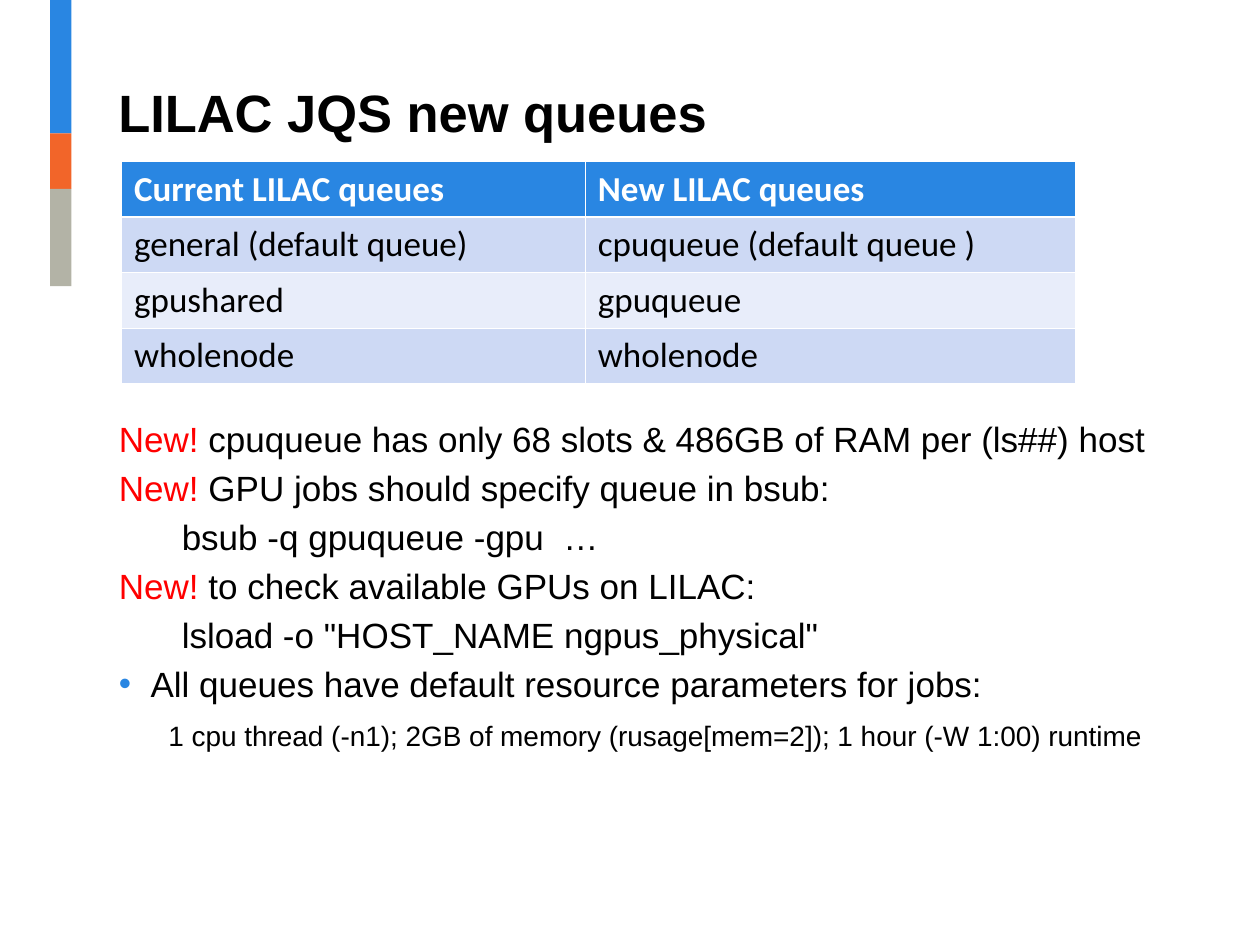
"""Build the slide on the new LILAC queues."""
from lxml.etree import SubElement
from pptx import Presentation
from pptx.dml.color import RGBColor
from pptx.enum.shapes import MSO_SHAPE as Shape
from pptx.enum.text import MSO_ANCHOR as Anchor, MSO_AUTO_SIZE as AutoSize, PP_ALIGN as Align
from pptx.oxml.ns import qn
from pptx.util import Cm, Pt

COLOURS = {
    "blue": "2986E2", "orange": "F26529", "grey": "B3B3A6", "black": "000000",
    "red": "FF0000", "white": "FFFFFF", "band": "CDD9F4", "pale": "E8EDFA",
}
TITLE = "LILAC JQS new queues"
QUEUES = [
    ("Current LILAC queues", "New LILAC queues"),
    ("general (default queue)", "cpuqueue (default queue )"),
    ("gpushared", "gpuqueue"),
    ("wholenode", "wholenode"),
]
NOTES = [
    ("new", "cpuqueue has only 68 slots & 486GB of RAM per (ls##) host"),
    ("new", "GPU jobs should specify queue in bsub:"),
    ("command", "bsub -q gpuqueue -gpu  …"),
    ("new", "to check available GPUs on LILAC:"),
    ("command", 'lsload -o "HOST_NAME ngpus_physical"'),
    ("bullet", "All queues have default resource parameters for jobs:"),
    ("detail", "1 cpu thread (-n1); 2GB of memory (rusage[mem=2]); 1 hour (-W 1:00) runtime"),
]
NOTE_STYLES = {
    "new": {"margin": 0, "indent": 0, "size": 20, "before": 4},
    "command": {"margin": 1.27, "indent": 0, "size": 20, "before": 4},
    "bullet": {"margin": 0.64, "indent": -0.64, "size": 20, "before": 4},
    "detail": {"margin": 1, "indent": 0, "size": 16, "before": 8},
}
BARS = [("blue", 2.69), ("orange", 1.12), ("grey", 1.96)]
COLUMN_WIDTHS = [9.35, 9.88]
ROW_HEIGHT = 1.11


def colour(name):
    """Return the named colour."""
    return RGBColor.from_string(COLOURS[name])


def set_attributes(target, values):
    """Set each attribute in values on the target."""
    for name, value in values.items():
        setattr(target, name, value)


def place(shape, left, top, width, height):
    """Move and size a shape in centimetres."""
    set_attributes(shape, {"left": Cm(left), "top": Cm(top),
                           "width": Cm(width), "height": Cm(height)})


def add_run(paragraph, text, size, tint="black", bold=False, font="Arial"):
    """Add a formatted run to a paragraph."""
    run = paragraph.add_run()
    run.text = text
    set_attributes(run.font, {"name": font, "size": Pt(size), "bold": bold})
    run.font.color.rgb = colour(tint)


def set_bullet(paragraph, margin, indent, shown):
    """Set the indents and the bullet of a paragraph."""
    properties = paragraph._p.get_or_add_pPr()
    properties.set("marL", str(Cm(margin)))
    properties.set("indent", str(Cm(indent)))
    if shown:
        tint = SubElement(properties, qn("a:buClr"))
        SubElement(tint, qn("a:srgbClr"), val=COLOURS["blue"])
        SubElement(properties, qn("a:buFont"), typeface="Arial")
        SubElement(properties, qn("a:buChar"), char="•")
    else:
        SubElement(properties, qn("a:buNone"))


def add_bars(slide):
    """Stack the coloured bars down the left edge."""
    top = 0
    for name, height in BARS:
        bar = slide.shapes.add_shape(Shape.RECTANGLE, Cm(1.01), Cm(top), Cm(0.43), Cm(height))
        bar.shadow.inherit = False
        bar.fill.solid()
        bar.fill.fore_color.rgb = colour(name)
        bar.line.fill.background()
        top += height


def fill_title(shape):
    """Place and write the title."""
    place(shape, 2.13, 0.84, 21.34, 2.18)
    set_attributes(shape.text_frame, {"vertical_anchor": Anchor.BOTTOM,
                                      "auto_size": AutoSize.NONE, "word_wrap": True})
    paragraph = shape.text_frame.paragraphs[0]
    paragraph.alignment = Align.LEFT
    add_run(paragraph, TITLE, 30, bold=True)


def fill_notes(shape):
    """Place and write the notes below the table."""
    place(shape, 2.14, 8.28, 21.34, 8.05)
    frame = shape.text_frame
    set_attributes(frame, {"vertical_anchor": Anchor.TOP,
                           "auto_size": AutoSize.NONE, "word_wrap": True})
    for index, (kind, text) in enumerate(NOTES):
        style = NOTE_STYLES[kind]
        paragraph = frame.add_paragraph() if index else frame.paragraphs[0]
        paragraph.space_before = Pt(style["before"] if index else 0)
        set_bullet(paragraph, style["margin"], style["indent"], kind == "bullet")
        if kind == "new":
            add_run(paragraph, "New! ", style["size"], "red")
        add_run(paragraph, text, style["size"])


def add_queue_table(slide):
    """Add the table that pairs current and new queues."""
    table = slide.shapes.add_table(
        len(QUEUES), len(COLUMN_WIDTHS), Cm(2.45), Cm(3.26),
        Cm(sum(COLUMN_WIDTHS)), Cm(ROW_HEIGHT * len(QUEUES))).table
    for column, width in zip(table.columns, COLUMN_WIDTHS):
        column.width = Cm(width)
    for row_index, texts in enumerate(QUEUES):
        header = row_index == 0
        fill = "blue" if header else ("pale", "band")[row_index % 2]
        table.rows[row_index].height = Cm(ROW_HEIGHT)
        for column_index, text in enumerate(texts):
            cell = table.cell(row_index, column_index)
            cell.fill.solid()
            cell.fill.fore_color.rgb = colour(fill)
            add_run(cell.text_frame.paragraphs[0], text, 20,
                    "white" if header else "black", header, "Calibri")


def main():
    """Build and save the presentation."""
    presentation = Presentation()
    set_attributes(presentation, {"slide_width": Cm(25.4), "slide_height": Cm(19.05)})
    slide = presentation.slides.add_slide(presentation.slide_layouts[1])
    add_bars(slide)
    fill_title(slide.shapes.title)
    fill_notes(slide.placeholders[1])
    add_queue_table(slide)
    presentation.save("out.pptx")


if __name__ == "__main__":
    main()
